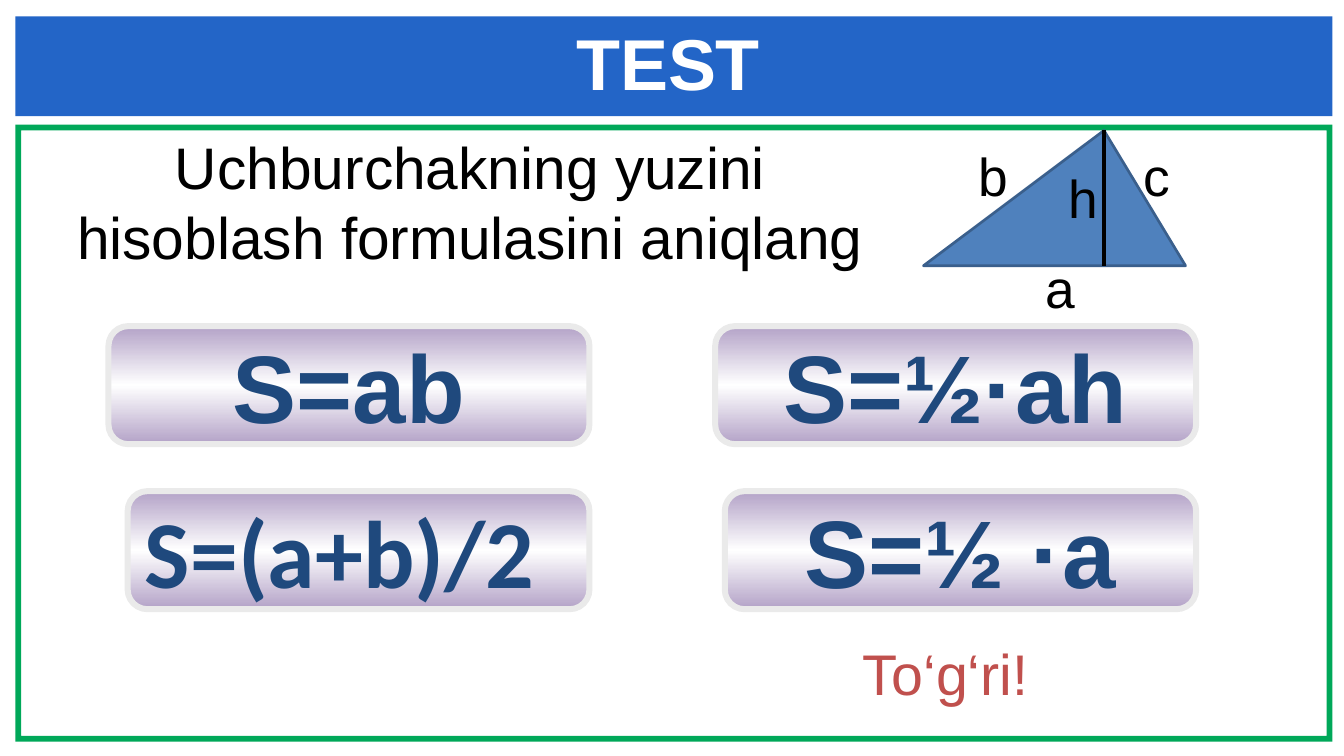
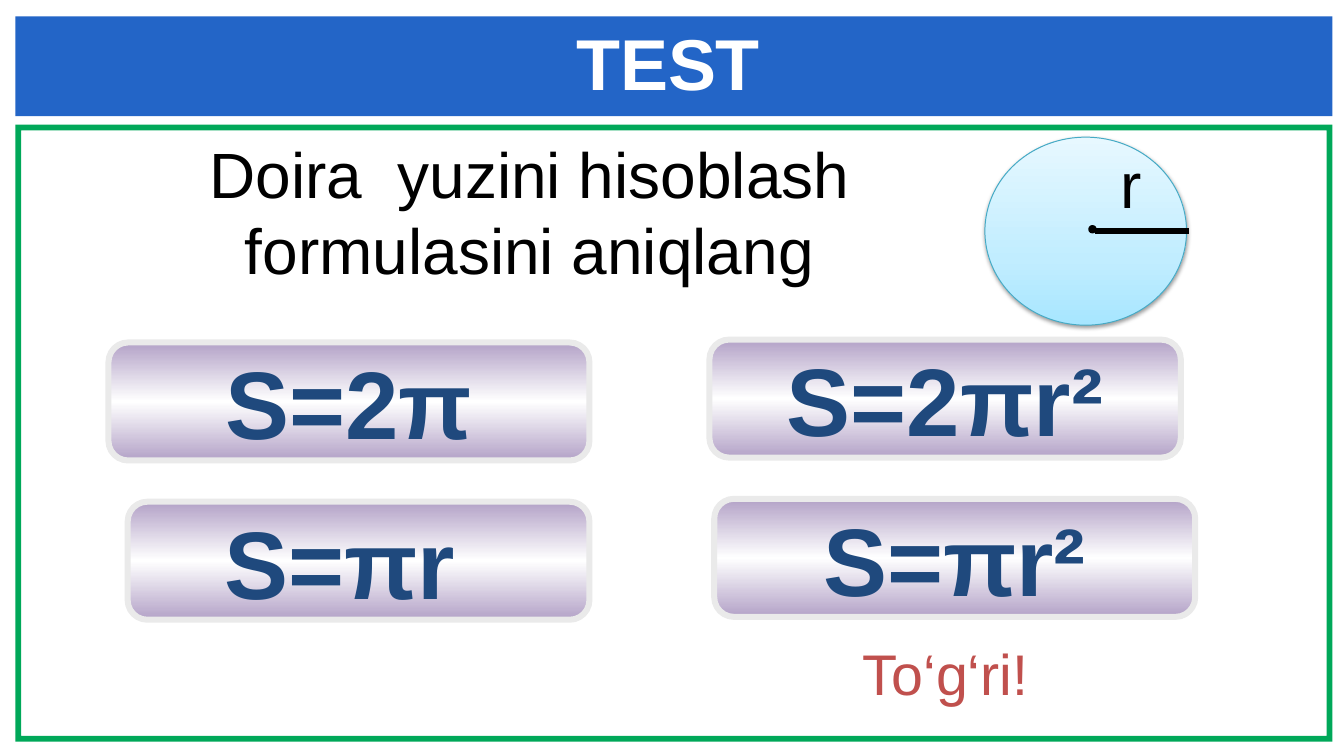
from dataclasses import dataclass

from lxml import etree
from pptx import Presentation
from pptx.dml.color import RGBColor
from pptx.enum.shapes import MSO_CONNECTOR, MSO_SHAPE
from pptx.enum.text import MSO_ANCHOR, MSO_AUTO_SIZE, PP_ALIGN
from pptx.oxml.ns import qn
from pptx.util import Inches, Pt

LEFT, CENTER = PP_ALIGN.LEFT, PP_ALIGN.CENTER
TOP, MIDDLE = MSO_ANCHOR.TOP, MSO_ANCHOR.MIDDLE


@dataclass(frozen=True)
class Theme:
    band: str = "2365C7"
    frame: str = "00A859"
    white: str = "FFFFFF"
    black: str = "000000"
    formula: str = "1F497D"
    correct: str = "C0504D"
    button_line: str = "EAEAEA"
    triangle: str = "4F81BD"
    triangle_line: str = "3A5F8C"
    circle_line: str = "46AAC5"
    button_stops: tuple = ((0, "B3A2C7"), (50, "FFFFFF"), (100, "B3A2C7"))
    circle_stops: tuple = ((0, "A7E6FF"), (35, "C1EDFF"), (100, "E7F8FF"))
    font: str = "Arial"
    title_size: int = 54
    formula_size: int = 72
    verdict_size: int = 43


T = Theme()
color = RGBColor.from_string


def write(tf, text, *, size, rgb=T.black, font=T.font, bold=False,
          align=CENTER, anchor=TOP, inset=(0.12, 0.06)):
    """Fill a text frame, one paragraph for each line of text."""
    tf.word_wrap = True
    tf.auto_size = MSO_AUTO_SIZE.NONE
    tf.vertical_anchor = anchor
    tf.margin_left, tf.margin_right = Inches(inset[0]), Inches(0.12)
    tf.margin_top = tf.margin_bottom = Inches(inset[1])
    for i, line in enumerate(text.split("\n")):
        p = tf.paragraphs[0] if i == 0 else tf.add_paragraph()
        p.alignment = align
        r = p.add_run()
        r.text = line
        r.font.name, r.font.size, r.font.bold = font, Pt(size), bold
        r.font.color.rgb = color(rgb)


def style(sp, fill, line=None, width=0, angle=0):
    """Fill with a colour or with gradient stops; angle runs counter-clockwise."""
    sp.shadow.inherit = False
    if isinstance(fill, str):
        sp.fill.solid()
        sp.fill.fore_color.rgb = color(fill)
    else:
        sp.fill.gradient()
        sp.fill.gradient_angle = angle
        stops = sp._element.spPr.find(".//" + qn("a:gsLst"))
        stops.clear()
        for pos, rgb in fill:
            gs = etree.SubElement(stops, qn("a:gs"), pos=str(pos * 1000))
            etree.SubElement(gs, qn("a:srgbClr"), val=rgb)
    if line:
        sp.line.color.rgb = color(line)
        sp.line.width = Pt(width)
    else:
        sp.line.fill.background()


prs = Presentation()
prs.slide_width, prs.slide_height = Inches(14), Inches(7.88)
layout = prs.slide_layouts[5]

# Each option: text, left, top, width, font, left inset (None when centred)
BUTTON_H = 1.23
quizzes = [
    dict(
        question=("Uchburchakning yuzini\nhisoblash formulasini aniqlang",
                  (0, 1.3, 9.8, 1.6), 44),
        options=[("S=(a+b)/2", 1.33, 5.12, 4.81, "Calibri", 0.12),
                 ("S=ab", 1.13, 3.4, 5.01, T.font, None),
                 ("S=½ ·a", 7.55, 5.12, 4.91, T.font, None),
                 ("S=½·ah", 7.45, 3.4, 5.01, T.font, None)],
        line=(11.5, 1.36, 11.5, 2.77, 3),
        label_size=40,
        labels=[("a", 10.79, 2.61), ("b", 10.09, 1.44),
                ("c", 11.81, 1.44), ("h", 11.03, 1.67)],
    ),
    dict(
        question=("Doira  yuzini hisoblash\nformulasini aniqlang",
                  (1.72, 1.34, 7.59, 1.74), 48),
        options=[("S=πr", 1.33, 5.23, 4.81, T.font, 0.95),
                 ("S=2π", 1.13, 3.57, 5.01, T.font, None),
                 ("S=2πr²", 7.39, 3.54, 4.91, T.font, None),
                 ("S=πr²", 7.44, 5.2, 5.01, T.font, None)],
        line=(11.41, 2.41, 12.39, 2.41, 4.5),
        label_size=48,
        labels=[("r", 11.57, 1.46)],
    ),
]
slides = [prs.slides.add_slide(layout) for _ in quizzes]

# Shared frame and title band live on the layout
FRAME_H, FRAME_LINE = 6.43, 0.06
for kind, top, height, rgb in [(MSO_SHAPE.FRAME, 1.3, FRAME_H, T.frame),
                               (MSO_SHAPE.RECTANGLE, 0.17, 1.04, T.band)]:
    sp = slides[0].shapes.add_shape(kind, Inches(0.16), Inches(top),
                                    Inches(13.72), Inches(height))
    style(sp, rgb)
    if kind == MSO_SHAPE.FRAME:
        sp.adjustments[0] = FRAME_LINE / FRAME_H
    layout.shapes._spTree.append(sp._element)

# Titles, answer buttons, questions and verdicts
for s, quiz in zip(slides, quizzes):
    title = s.shapes.title
    title.left, title.top = Inches(0.54), Inches(0.15)
    title.width, title.height = Inches(12.84), Inches(0.95)
    write(title.text_frame, "TEST", size=T.title_size, rgb=T.white, bold=True,
          inset=(0.12, 0.04))

    for text, left, top, width, font, indent in quiz["options"]:
        sp = s.shapes.add_shape(MSO_SHAPE.ROUNDED_RECTANGLE, Inches(left), Inches(top),
                                Inches(width), Inches(BUTTON_H))
        style(sp, T.button_stops, T.button_line, 4.5, angle=270)
        write(sp.text_frame, text, size=T.formula_size, rgb=T.formula, font=font,
              bold=True, anchor=MIDDLE, align=LEFT if indent else CENTER,
              inset=(indent or 0.12, 0.06))

    question, box, size = quiz["question"]
    tb = s.shapes.add_textbox(*map(Inches, box))
    write(tb.text_frame, question, size=size)
    tb = s.shapes.add_textbox(*map(Inches, (8.33, 6.59, 3.04, 0.77)))
    write(tb.text_frame, "To‘g‘ri!", size=T.verdict_size, rgb=T.correct)

triangle_slide, circle_slide = slides

# Triangle
fb = triangle_slide.shapes.build_freeform(Inches(9.62), Inches(2.77))
fb.add_line_segments([(Inches(11.5), Inches(1.36)), (Inches(12.35), Inches(2.77))],
                     close=True)
style(fb.convert_to_shape(), T.triangle, T.triangle_line, 2)

# Circle with a soft shadow, and its centre
circle = circle_slide.shapes.add_shape(MSO_SHAPE.OVAL, Inches(10.26), Inches(1.43),
                                       Inches(2.1), Inches(1.96))
style(circle, T.circle_stops, T.circle_line, 0.75, angle=90)
shadow = etree.SubElement(circle._element.spPr.find(qn("a:effectLst")),
                          qn("a:outerShdw"), blurRad=str(Pt(3.1)), dist=str(Pt(1.6)),
                          dir="5400000", rotWithShape="0")
rgb = etree.SubElement(shadow, qn("a:srgbClr"), val=T.black)
etree.SubElement(rgb, qn("a:alpha"), val="38000")
centre = circle_slide.shapes.add_shape(MSO_SHAPE.OVAL, Inches(11.35), Inches(2.36),
                                       Inches(0.06), Inches(0.06))
style(centre, T.black, T.black, 2)

# Height or radius, then the letters
for s, quiz in zip(slides, quizzes):
    *ends, width = quiz["line"]
    ln = s.shapes.add_connector(MSO_CONNECTOR.STRAIGHT, *map(Inches, ends))
    ln.line.color.rgb = color(T.black)
    ln.line.width = Pt(width)
    etree.SubElement(ln._element.spPr, qn("a:effectLst"))
    size = quiz["label_size"]
    for letter, left, top in quiz["labels"]:
        tb = s.shapes.add_textbox(Inches(left), Inches(top),
                                  Inches(0.55), Inches(size * 0.019))
        write(tb.text_frame, letter, size=size, align=LEFT, inset=(0.1, 0.05))

prs.save("out.pptx")
